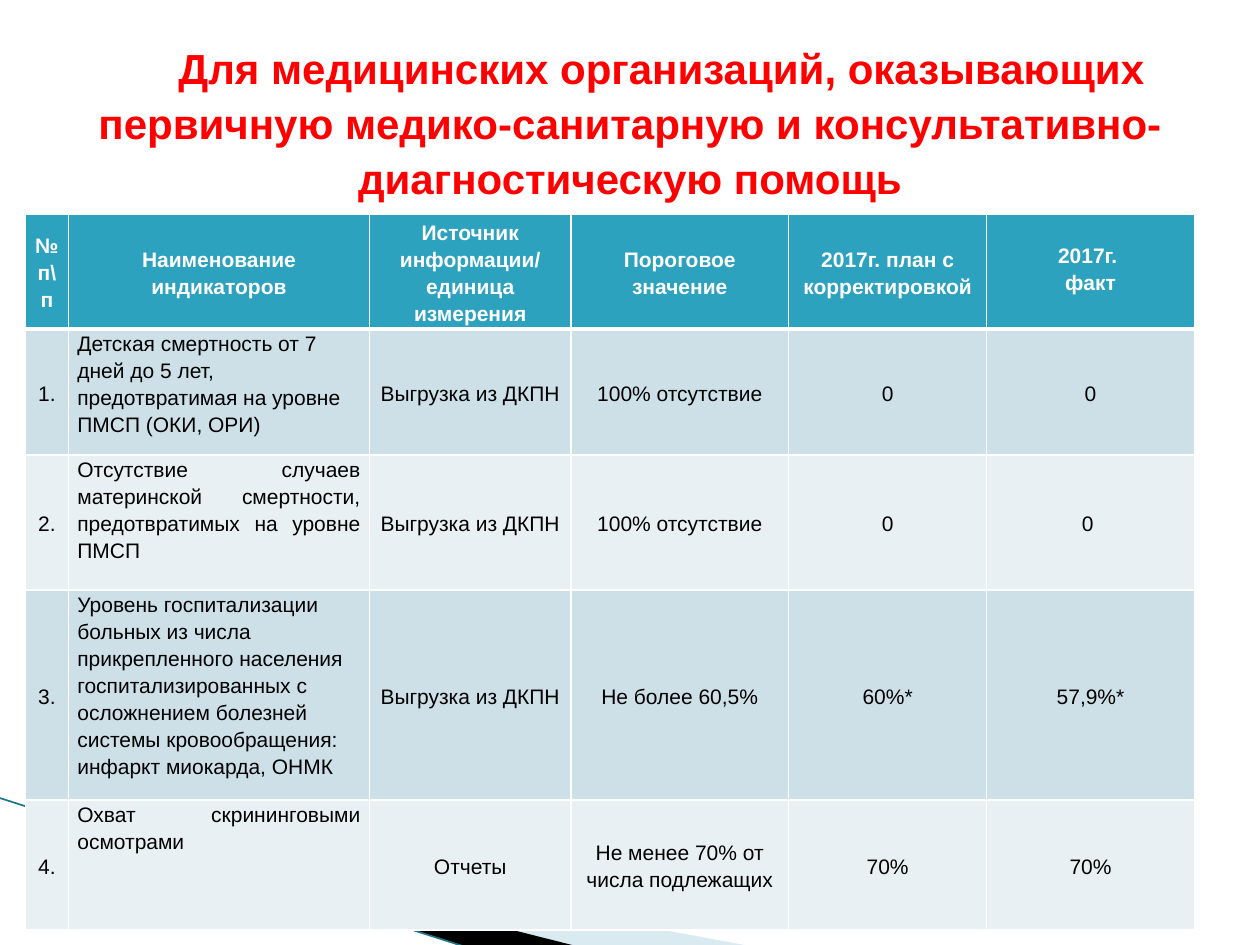
import pptx
import pptx.util
import pptx.dml.color
import pptx.enum.text
import pptx.enum.shapes
import lxml.etree

Cm = pptx.util.Cm
Pt = pptx.util.Pt
ALIGN = pptx.enum.text.PP_ALIGN
ANCHOR = pptx.enum.text.MSO_ANCHOR
NS = "{http://schemas.openxmlformats.org/drawingml/2006/main}"
COLORS = {
    "title": "FF0000", "header": "2DA2BF", "odd": "CDE0E8", "even": "E8F0F4",
    "white": "FFFFFF", "black": "000000", "wave": "A0CBDC", "edge": "1C7585",
}


def rgb(name):
    return pptx.dml.color.RGBColor.from_string(COLORS[name])


def add_run(paragraph, text, size, color, bold):
    run = paragraph.add_run()
    run.text = text
    run.font.name = "Arial"
    run.font.size = Pt(size)
    run.font.bold = bold
    run.font.color.rgb = rgb(color)


deck = pptx.Presentation()
deck.slide_width = Cm(25.4)
deck.slide_height = Cm(19.05)
slide = deck.slides.add_slide(deck.slide_layouts[6])

waves = [
    ("wave", 40, [(1.4, 16.53), (15.11, 19.07), (11.58, 19.07), (1.4, 16.51)]),
    ("black", 100, [(1.35, 16.48), (11.61, 19.07), (9.45, 19.1), (1.37, 16.51)]),
]
for color, opacity, points in waves:
    corners = [(Cm(x), Cm(y)) for x, y in points]
    outline = slide.shapes.build_freeform(*corners[0])
    outline.add_line_segments(corners[1:], close=True)
    wave = outline.convert_to_shape()
    wave.shadow.inherit = False
    wave.fill.solid()
    wave.fill.fore_color.rgb = rgb(color)
    wave.line.fill.background()
    if opacity < 100:
        tint = wave.fill._xPr.find(f"{NS}solidFill/{NS}srgbClr")
        lxml.etree.SubElement(tint, f"{NS}alpha", val=str(opacity * 1000))

edge = slide.shapes.add_connector(
    pptx.enum.shapes.MSO_CONNECTOR.STRAIGHT, Cm(-0.03), Cm(16.08), Cm(9.42), Cm(19.1))
edge.line.color.rgb = rgb("edge")
edge.line.width = Pt(0.95)
lxml.etree.SubElement(edge._element.spPr, f"{NS}effectLst")

rows = [
    ["№ п\\п", "Наименование индикаторов", "Источник информации/ единица измерения",
     "Пороговое значение", "2017г. план с корректировкой", "2017г. \nфакт"],
    ["1.", "Детская смертность от 7 дней до 5 лет, предотвратимая на уровне ПМСП (ОКИ, ОРИ)",
     "Выгрузка из ДКПН", "100% отсутствие", "0", "0"],
    ["2.", "Отсутствие случаев материнской смертности, предотвратимых на уровне ПМСП",
     "Выгрузка из ДКПН", "100% отсутствие", "0", "0 "],
    ["3.", "Уровень госпитализации больных из числа прикрепленного населения "
     "госпитализированных с осложнением болезней системы кровообращения: "
     "инфаркт миокарда, ОНМК",
     "Выгрузка из ДКПН", "Не более 60,5%", "60%*", "57,9%*"],
    ["4.", "Охват скрининговыми осмотрами", "Отчеты",
     "Не менее 70% от числа подлежащих", "70%", "70%"],
]
widths = [0.87, 6.07, 4.06, 4.39, 3.99, 4.19]
heights = [2.31, 2.54, 2.72, 4.24, 2.62]
indicators = slide.shapes.add_table(
    len(rows), len(widths), Cm(0.51), Cm(4.32), Cm(sum(widths)), Cm(sum(heights))).table
for column, width in zip(indicators.columns, widths):
    column.width = Cm(width)
for row, height in zip(indicators.rows, heights):
    row.height = Cm(height)

for r, texts in enumerate(rows):
    header = r == 0
    for c, text in enumerate(texts):
        cell = indicators.cell(r, c)
        fact_header = header and c == 5
        description = not header and c == 1
        cell.margin_left = cell.margin_right = Cm(0.18)
        cell.margin_top = Cm(0.54 if fact_header else 0)
        cell.margin_bottom = Cm(0)
        cell.vertical_anchor = ANCHOR.TOP if fact_header or description else ANCHOR.MIDDLE
        properties = cell._tc.get_or_add_tcPr()
        for side in "LRTB":
            thick = (header and side == "B") or (r == 1 and side == "T")
            border = lxml.etree.SubElement(
                properties, f"{NS}ln{side}", w=str(Pt(3 if thick else 1)))
            paint = lxml.etree.SubElement(border, f"{NS}solidFill")
            lxml.etree.SubElement(paint, f"{NS}srgbClr", val=COLORS["white"])
        cell.fill.solid()
        cell.fill.fore_color.rgb = rgb("header" if header else "odd" if r % 2 else "even")
        for i, line in enumerate(text.split("\n")):
            frame = cell.text_frame
            paragraph = frame.add_paragraph() if i else frame.paragraphs[0]
            paragraph.line_spacing = 1.15
            paragraph.alignment = ALIGN.CENTER
            if description:
                paragraph.alignment = ALIGN.LEFT if r % 2 else ALIGN.JUSTIFY
            add_run(paragraph, line, 12, "white" if header else "black", header)

title = slide.shapes.add_textbox(Cm(1.27), Cm(0.76), Cm(22.86), Cm(3.18)).text_frame
title.word_wrap = True
title.vertical_anchor = ANCHOR.MIDDLE
heading = title.paragraphs[0]
heading.alignment = ALIGN.CENTER
heading.line_spacing = 1.08
add_run(heading, "\t", 28, "title", True)
add_run(heading, "Для медицинских организаций, оказывающих первичную "
        "медико-санитарную и консультативно-диагностическую помощь", 24, "title", True)

deck.save("out.pptx")
